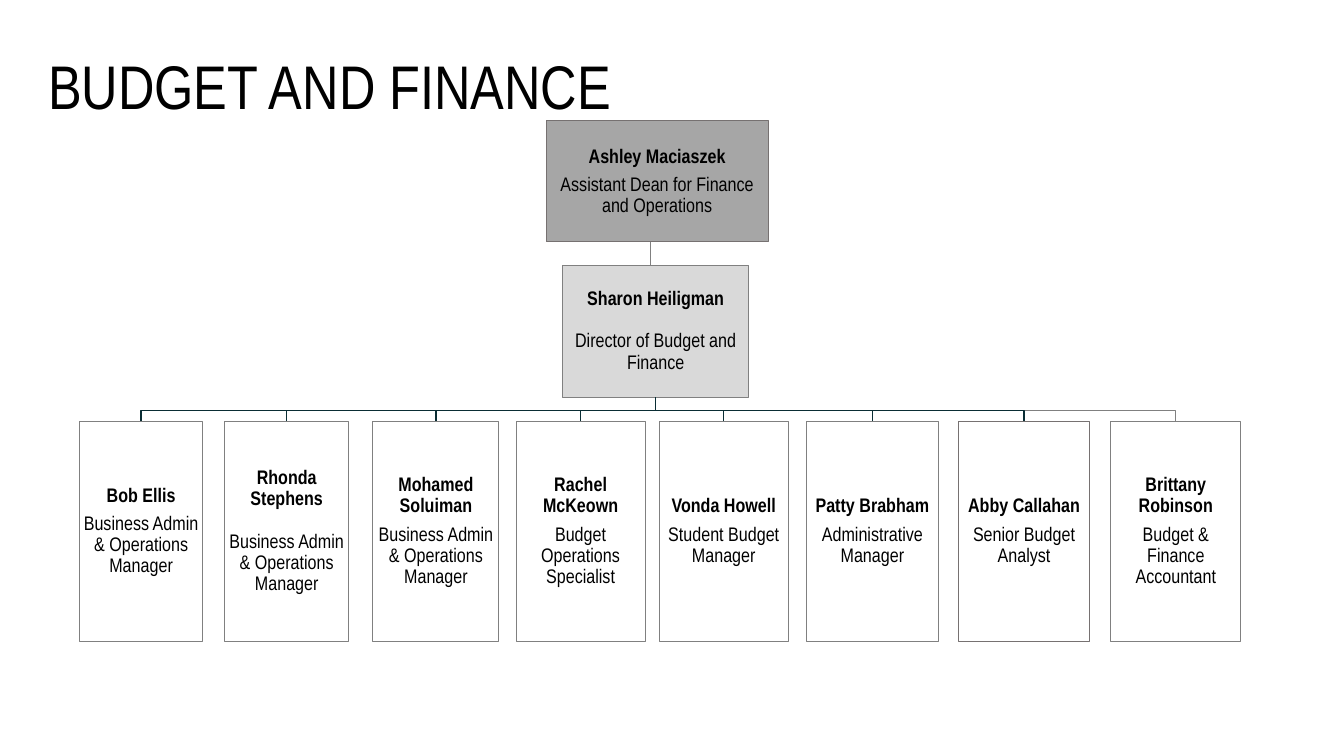
"""Build the budget and finance organisation chart."""
from dataclasses import dataclass

from lxml.etree import SubElement
from pptx import Presentation
from pptx.dml.color import RGBColor
from pptx.enum.shapes import MSO_CONNECTOR, MSO_SHAPE
from pptx.enum.text import MSO_ANCHOR, PP_ALIGN
from pptx.oxml.ns import qn
from pptx.util import Inches, Pt


@dataclass(frozen=True)
class Theme:
    """Hold the font, sizes and colours of the slide."""
    font: str = "Arial Narrow"
    title_size: int = 44
    body_size: int = 14
    ink: str = "000000"
    dean_fill: str = "A6A6A6"
    director_fill: str = "D9D9D9"
    outline: str = "808080"
    dark_outline: str = "767171"
    branch: str = "0A2D34"
    thin: float = 0.75
    thick: float = 1
    line_spacing: float = 0.9
    name_gap: int = 5
    wide_gap: int = 15


THEME = Theme()
UNIT = Inches(0.1)
COLUMNS, ROWS = 133.33, 75
REPORT_TOP, REPORT_HEIGHT = 41.8, 21.8
BRANCH_ROW = 40.7
STEM_COLUMN = 64.5
ADMIN_ROLE = "Business Admin & Operations Manager"
DEAN = ("Ashley Maciaszek", "Assistant Dean for Finance and Operations")
DIRECTOR = ("Sharon Heiligman", "Director of Budget and Finance")
REPORTS = [
    (7.9, 12.2, "Bob Ellis", ADMIN_ROLE, {}),
    (22.3, 12.3, "Rhonda Stephens", ADMIN_ROLE, {"gap": THEME.wide_gap}),
    (37, 12.5, "Mohamed Soluiman", ADMIN_ROLE, {}),
    (51.2, 12.8, "Rachel McKeown", "Budget Operations Specialist", {}),
    (65.4, 12.8, "Vonda Howell", "Student Budget Manager", {}),
    (80, 13.1, "Patty Brabham", "Administrative Manager", {}),
    (95.1, 13, "Abby Callahan", "Senior Budget Analyst", {"outline": THEME.dark_outline}),
    (110.2, 12.9, "Brittany Robinson", "Budget & Finance Accountant", {}),
]


def grid(*cells):
    """Turn grid counts into slide lengths."""
    return [round(cell * UNIT) for cell in cells]


def apply_format(target, values):
    """Set each attribute named in a dict."""
    for name, value in values.items():
        setattr(target, name, value)


def style_line(line, color, width):
    """Give a line its colour and width."""
    line.color.rgb = RGBColor.from_string(color)
    line.width = Pt(width)


def set_frame(frame, margin):
    """Wrap and centre a text frame vertically inside equal margins."""
    values = {"word_wrap": True, "vertical_anchor": MSO_ANCHOR.MIDDLE}
    values.update({f"margin_{side}": Inches(margin) for side in ("left", "right", "top", "bottom")})
    apply_format(frame, values)


def write_para(para, text, size, align, bold=False, gap=0):
    """Write one styled span into a paragraph."""
    apply_format(para, {"alignment": align, "line_spacing": THEME.line_spacing,
                        "space_before": Pt(0), "space_after": Pt(gap)})
    span = para.add_run()
    span.text = text
    apply_format(span.font, {"name": THEME.font, "size": Pt(size), "bold": bold})
    span.font.color.rgb = RGBColor.from_string(THEME.ink)


def add_title(page, text):
    """Add the slide title."""
    box = page.shapes.add_textbox(*grid(3.8, 1.6, 115, 14.5))
    set_frame(box.text_frame, 0.1)
    write_para(box.text_frame.paragraphs[0], text, THEME.title_size, PP_ALIGN.LEFT)


def add_person(page, cells, name, role, fill=None, outline=THEME.outline, gap=THEME.name_gap):
    """Add a box with a person's name and role."""
    box = page.shapes.add_shape(MSO_SHAPE.RECTANGLE, *grid(*cells))
    box.shadow.inherit = False
    if fill:
        box.fill.solid()
        box.fill.fore_color.rgb = RGBColor.from_string(fill)
    else:
        box.fill.background()
    style_line(box.line, outline, THEME.thin)
    frame = box.text_frame
    set_frame(frame, 0.01)
    write_para(frame.paragraphs[0], name, THEME.body_size, PP_ALIGN.CENTER, True, gap)
    write_para(frame.add_paragraph(), role, THEME.body_size, PP_ALIGN.CENTER)
    return box


def add_branch(page, parent, child, color, width):
    """Draw a stepped line from a parent's foot to a child's head."""
    start = parent.left + parent.width // 2
    end = child.left + child.width // 2
    foot = parent.top + parent.height
    bend, = grid(BRANCH_ROW)
    builder = page.shapes.build_freeform(start, foot)
    builder.add_line_segments([(start, bend), (end, bend), (end, child.top)], close=False)
    branch = builder.convert_to_shape()
    branch.shadow.inherit = False
    branch.fill.background()
    style_line(branch.line, color, width)


def add_stem(page, upper, lower):
    """Draw the straight line between two levels."""
    column, = grid(STEM_COLUMN)
    stem = page.shapes.add_connector(MSO_CONNECTOR.STRAIGHT, column, upper.top + upper.height,
                                     column, lower.top)
    style_line(stem.line, THEME.outline, THEME.thin)
    SubElement(stem._element.spPr, qn("a:effectLst"))


def main():
    """Build and save the deck."""
    deck = Presentation()
    deck.slide_width, deck.slide_height = grid(COLUMNS, ROWS)
    page = deck.slides.add_slide(deck.slide_layouts[6])
    add_title(page, "BUDGET AND FINANCE")
    dean = add_person(page, (54.2, 12, 22, 12), *DEAN, THEME.dean_fill, THEME.dark_outline)
    director = add_person(page, (55.8, 26.3, 18.5, 13.1), *DIRECTOR, THEME.director_fill,
                          gap=THEME.wide_gap)
    reports = [add_person(page, (left, REPORT_TOP, width, REPORT_HEIGHT), name, role, **look)
               for left, width, name, role, look in REPORTS]
    add_branch(page, director, reports[-1], THEME.outline, THEME.thin)
    for report in reports[:-1]:
        add_branch(page, director, report, THEME.branch, THEME.thick)
    add_stem(page, dean, director)
    deck.save("out.pptx")


if __name__ == "__main__":
    main()
